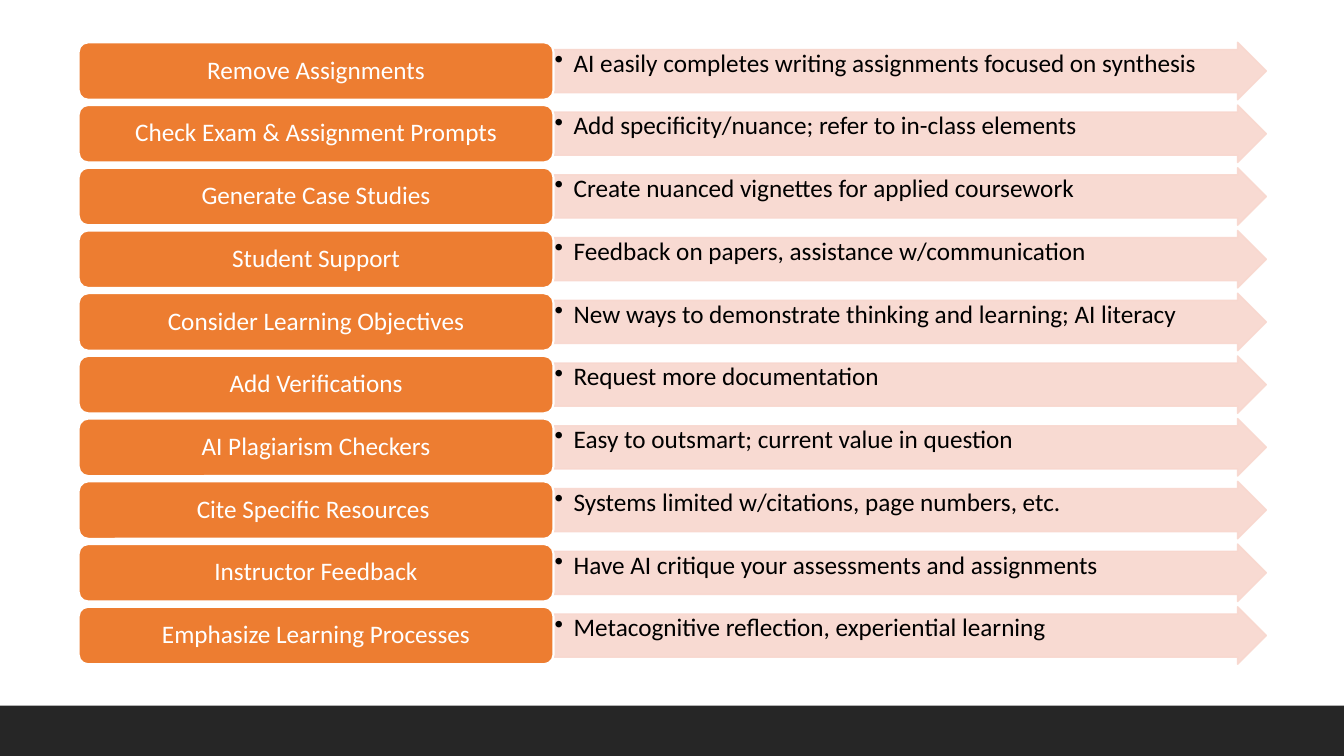
from dataclasses import dataclass

from lxml.etree import SubElement
from pptx import Presentation
from pptx.dml.color import RGBColor
from pptx.enum.shapes import MSO_SHAPE as Preset
from pptx.enum.text import MSO_ANCHOR as Anchor, PP_ALIGN as Align
from pptx.oxml.ns import qn
from pptx.util import Inches, Pt


@dataclass(frozen=True)
class Theme:
    font: str = "Calibri"
    size: int = 18
    orange: str = "ED7D31"
    peach: str = "F8D7CE"
    charcoal: str = "262626"
    white: str = "FFFFFF"
    black: str = "000000"


THEME = Theme()

STRATEGIES = [
    ("Remove Assignments", "AI easily completes writing assignments focused on synthesis"),
    ("Check Exam & Assignment Prompts", "Add specificity/nuance; refer to in-class elements"),
    ("Generate Case Studies", "Create nuanced vignettes for applied coursework"),
    ("Student Support", "Feedback on papers, assistance w/communication"),
    ("Consider Learning Objectives", "New ways to demonstrate thinking and learning; AI literacy"),
    ("Add Verifications", "Request more documentation"),
    ("AI Plagiarism Checkers", "Easy to outsmart; current value in question"),
    ("Cite Specific Resources ", "Systems limited w/citations, page numbers, etc."),
    ("Instructor Feedback", "Have AI critique your assessments and assignments"),
    ("Emphasize Learning Processes", "Metacognitive reflection, experiential learning"),
]

FIRST_TOP, LAST_TOP = 0.42, 6.02
ROW_HEIGHT = 0.57
LABEL_LEFT, LABEL_WIDTH = 0.78, 4.71
ARROW_LEFT, ARROW_WIDTH = LABEL_LEFT + LABEL_WIDTH, 7.07
BULLET_INDENT = 0.19


def add_panel(slide, preset, left, top, width, height, fill, line=None, line_width=1):
    shape = slide.shapes.add_shape(
        preset, Inches(left), Inches(top), Inches(width), Inches(height)
    )
    shape.shadow.inherit = False
    shape.fill.solid()
    shape.fill.fore_color.rgb = RGBColor.from_string(fill)
    if line:
        shape.line.color.rgb = RGBColor.from_string(line)
        shape.line.width = Pt(line_width)
    else:
        shape.line.fill.background()
    return shape


def set_opacity(shape, percent):
    for color in shape.element.spPr.iter(qn("a:srgbClr")):
        SubElement(color, qn("a:alpha"), val=str(percent * 1000))


def add_bullet(paragraph):
    properties = paragraph._p.get_or_add_pPr()
    indent = Inches(BULLET_INDENT)
    properties.set("marL", str(indent))
    properties.set("indent", str(-indent))
    SubElement(properties, qn("a:buChar"), char="•")


def write_text(shape, text, *, color, align, anchor, inset_x, inset_y, bullet=False):
    frame = shape.text_frame
    frame.word_wrap = True
    frame.vertical_anchor = anchor
    frame.margin_left = frame.margin_right = Inches(inset_x)
    frame.margin_top = frame.margin_bottom = Inches(inset_y)
    paragraph = frame.paragraphs[0]
    if bullet:
        paragraph.level = 1
        add_bullet(paragraph)
    paragraph.alignment = align
    paragraph.line_spacing = 0.9
    run = paragraph.add_run()
    run.text = text
    run.font.name = THEME.font
    run.font.size = Pt(THEME.size)
    run.font.color.rgb = RGBColor.from_string(color)


def add_detail_arrow(slide, top, text):
    arrow = add_panel(slide, Preset.RIGHT_ARROW, ARROW_LEFT, top, ARROW_WIDTH,
                      ROW_HEIGHT, THEME.peach, THEME.peach)
    arrow.adjustments[0] = 0.75
    arrow.adjustments[1] = 0.5
    set_opacity(arrow, 90)
    write_text(arrow, text, color=THEME.black, align=Align.LEFT, anchor=Anchor.TOP,
               inset_x=0.01, inset_y=0.01, bullet=True)


def add_label(slide, top, text):
    label = add_panel(slide, Preset.ROUNDED_RECTANGLE, LABEL_LEFT, top, LABEL_WIDTH,
                      ROW_HEIGHT, THEME.orange, THEME.white, 1.5)
    write_text(label, text, color=THEME.white, align=Align.CENTER,
               anchor=Anchor.MIDDLE, inset_x=0.07, inset_y=0.04)


def main():
    presentation = Presentation()
    presentation.slide_width = Inches(13.33)
    presentation.slide_height = Inches(7.5)
    slide = presentation.slides.add_slide(presentation.slide_layouts[6])

    add_panel(slide, Preset.RECTANGLE, 0, 7, 13.33, 0.5, THEME.charcoal)
    pitch = (LAST_TOP - FIRST_TOP) / (len(STRATEGIES) - 1)
    for row, (strategy, detail) in enumerate(STRATEGIES):
        top = FIRST_TOP + row * pitch
        add_detail_arrow(slide, top, detail)
        add_label(slide, top, strategy)

    presentation.save("out.pptx")


if __name__ == "__main__":
    main()
